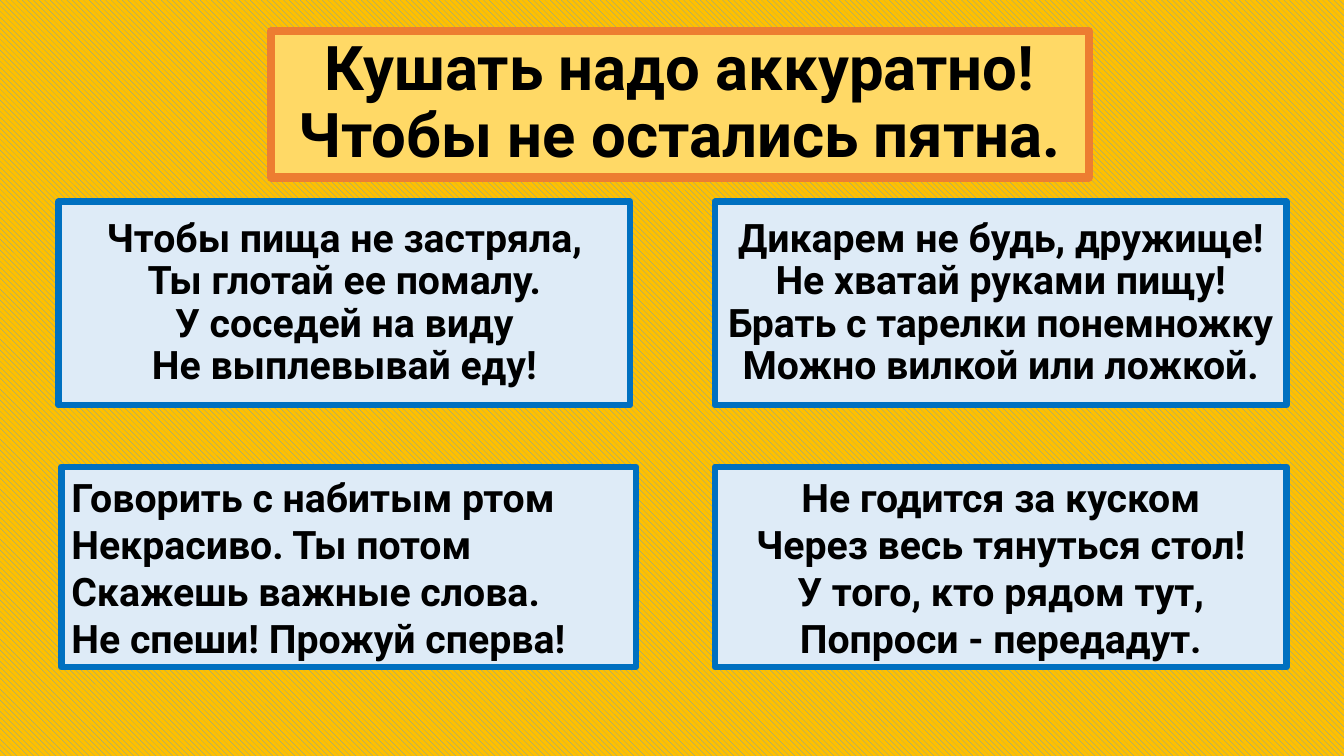
import pptx
import pptx.util
import pptx.dml.color
import pptx.enum.dml
import pptx.enum.text

WIDE, HIGH = 13.33, 7.5
ALIGN = pptx.enum.text.PP_ALIGN
TITLE = ["Кушать надо аккуратно!", "Чтобы не остались пятна."]
COLS = [0.58, 7.09]
ROWS = [2, 4.63]
CARD = (5.67, 2.02)
LOW = 1.99
VERSES = [
    {"cell": (0, 0), "space": 0.9, "align": ALIGN.CENTER, "lines": [
        "Чтобы пища не застряла,", "Ты глотай ее помалу.",
        "У соседей на виду", "Не выплевывай еду!"]},
    {"cell": (1, 0), "space": 0.9, "align": ALIGN.CENTER, "lines": [
        "Дикарем не будь, дружище!", "Не хватай руками пищу!",
        "Брать с тарелки понемножку", "Можно вилкой или ложкой."]},
    {"cell": (0, 1), "space": 1.0, "align": ALIGN.LEFT, "nudge": 0.03, "lines": [
        "Говорить с набитым ртом", "Некрасиво. Ты потом",
        "Скажешь важные слова.", "Не спеши! Прожуй сперва!"]},
    {"cell": (1, 1), "space": 1.0, "align": ALIGN.CENTER, "lines": [
        "Не годится за куском", "Через весь тянуться стол!",
        "У того, кто рядом тут,", "Попроси - передадут."]},
]


def tint(code):
    return pptx.dml.color.RGBColor.from_string(code)


def put(item, values):
    for name, value in values.items():
        setattr(item, name, value)


def dress(shape, place, lines, size, fill, edge, width, align, space):
    names = ("left", "top", "width", "height")
    put(shape, dict(zip(names, map(pptx.util.Inches, place))))
    shape.fill.solid()
    shape.fill.fore_color.rgb = tint(fill)
    shape.line.color.rgb = tint(edge)
    shape.line.width = pptx.util.Pt(width)
    frame = shape.text_frame
    put(frame, {"word_wrap": True,
                "auto_size": pptx.enum.text.MSO_AUTO_SIZE.NONE,
                "vertical_anchor": pptx.enum.text.MSO_ANCHOR.MIDDLE})
    para = frame.paragraphs[0]
    para.text = "\v".join(lines)
    put(para, {"alignment": align, "line_spacing": space,
               "space_before": pptx.util.Pt(0)})
    for run in para.runs:
        put(run.font, {"name": "Roboto", "size": pptx.util.Pt(size), "bold": True})
        run.font.color.rgb = tint("000000")


def main():
    deck = pptx.Presentation()
    put(deck, {"slide_width": pptx.util.Inches(WIDE),
               "slide_height": pptx.util.Inches(HIGH)})
    slide = deck.slides.add_slide(deck.slide_layouts[5])
    back = slide.background.fill
    back.patterned()
    back.pattern = pptx.enum.dml.MSO_PATTERN.WIDE_DOWNWARD_DIAGONAL
    back.fore_color.rgb = tint("5B9BD5")
    back.back_color.rgb = tint("FFC000")

    dress(slide.shapes.title, (2.69, 0.31, 8.11, 1.45), TITLE, 44,
          "FFD966", "ED7D31", 6, ALIGN.CENTER, 0.9)
    for verse in VERSES:
        col, row = verse["cell"]
        nudge = verse.get("nudge", 0)
        place = (COLS[col] + nudge, ROWS[row], CARD[0] + nudge,
                 LOW if row else CARD[1])
        box = slide.shapes.add_textbox(0, 0, 0, 0)
        dress(box, place, verse["lines"], 28, "DEEBF7", "0070C0", 4.5,
              verse["align"], verse["space"])
    deck.save("out.pptx")


if __name__ == "__main__":
    main()
